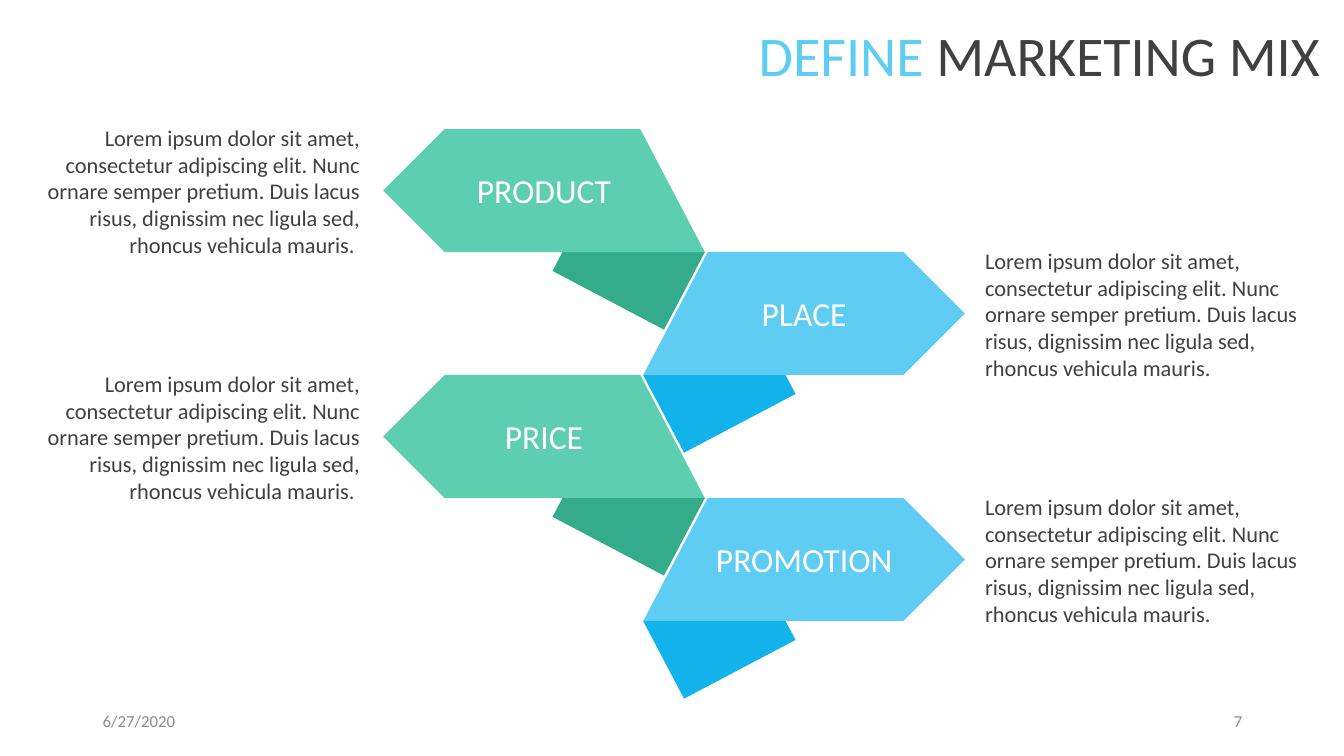
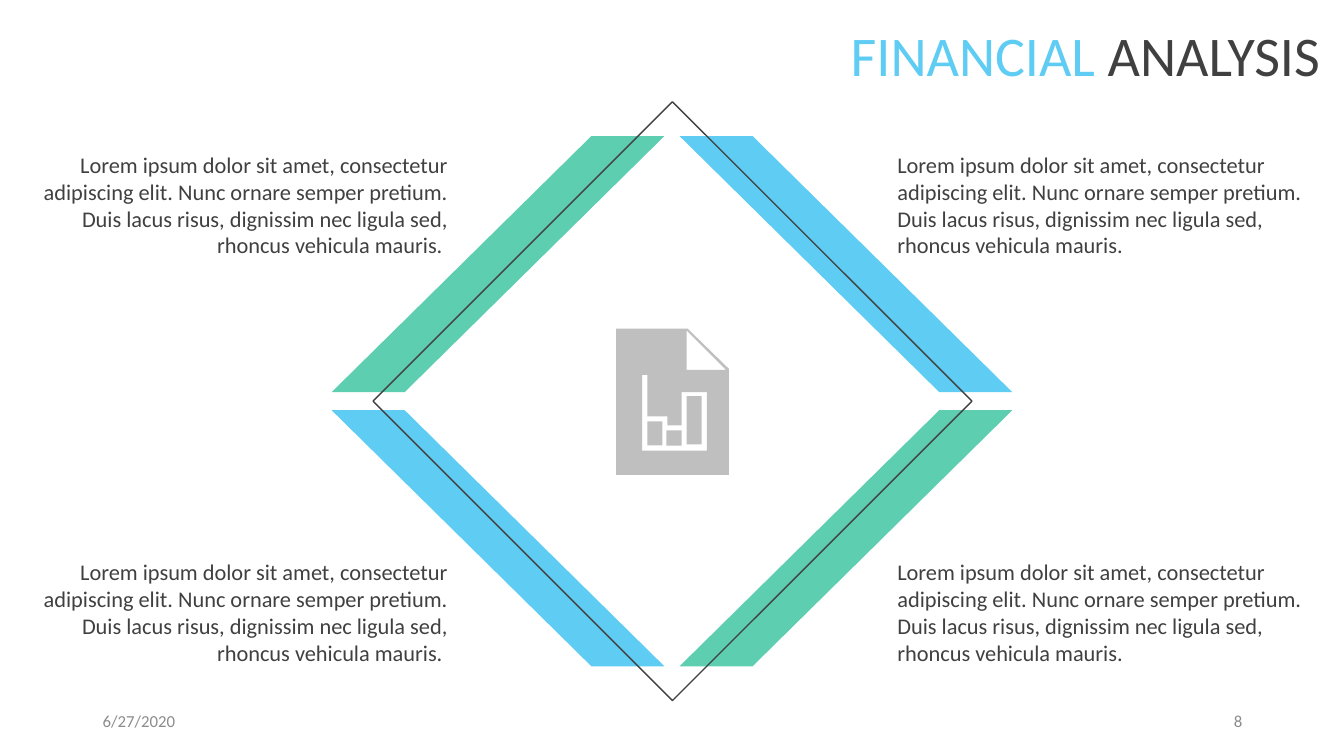
"""Build two slides: a marketing mix ribbon and a financial analysis diamond."""
from pptx import Presentation
from pptx.dml.color import RGBColor
from pptx.enum.shapes import MSO_SHAPE
from pptx.enum.text import MSO_ANCHOR, PP_ALIGN
from pptx.util import Inches, Pt

RECTANGLE = MSO_SHAPE.RECTANGLE
PARALLELOGRAM = MSO_SHAPE.PARALLELOGRAM
DIAMOND = MSO_SHAPE.DIAMOND
MIDDLE = MSO_ANCHOR.MIDDLE
LEFT, CENTER, RIGHT = PP_ALIGN.LEFT, PP_ALIGN.CENTER, PP_ALIGN.RIGHT

FONT = "Calibri"
BLUE = RGBColor(0x5E, 0xCC, 0xF3)
DARK_BLUE = RGBColor(0x12, 0xB2, 0xEB)
GREEN = RGBColor(0x5D, 0xCE, 0xAF)
DARK_GREEN = RGBColor(0x34, 0xAC, 0x8B)
CHARCOAL = RGBColor(0x40, 0x40, 0x40)
FOOTER_GRAY = RGBColor(0x8C, 0x8C, 0x8C)
ICON_GRAY = RGBColor(0xBF, 0xBF, 0xBF)
WHITE = RGBColor(0xFF, 0xFF, 0xFF)

DATE = "6/27/2020"
BODY = (
    "Lorem ipsum dolor sit amet, consectetur adipiscing elit. "
    "Nunc ornare semper pretium. Duis lacus risus, dignissim nec ligula sed, "
    "rhoncus vehicula mauris."
)

ROW_TOP, ROW_HEIGHT = 1.28, 1.22
MIRROR_SUM = 13.37
ARROW = [(6.35, 0), (4.41, 0), (3.8, 0.61), (4.41, 1.22), (6.99, 1.22)]
FOLD_LEFT, FOLD_DROP, FOLD_WIDTH, FOLD_HEIGHT = 5.61, 0.88, 1.25, 0.87
FOLD_ANGLE = 27.8

SHEET = [(6.11, 3.26), (6.82, 3.26), (7.23, 3.66), (7.23, 4.71), (6.11, 4.71)]
SHEET_CORNER = [(6.81, 3.28), (7.2, 3.67), (6.81, 3.67)]
CHART_OUTLINE = [
    (6.37, 3.72), (6.42, 3.72), (6.42, 4.13), (6.62, 4.13), (6.62, 4.22),
    (6.76, 4.22), (6.76, 3.89), (7.01, 3.89), (7.01, 4.47), (6.37, 4.47),
]
CHART_BARS = [
    (6.42, 4.18, 0.15, 0.24), (6.61, 4.27, 0.15, 0.15), (6.81, 3.93, 0.15, 0.48),
]


def write_spans(frame, spans, size, align):
    frame.word_wrap = True
    frame.vertical_anchor = MIDDLE
    para = frame.paragraphs[0]
    para.alignment = align
    for text, color in spans:
        span = para.add_run()
        span.text = text
        span.font.name = FONT
        span.font.size = Pt(size)
        span.font.color.rgb = color


def add_text(page, place, spans, size, align, padded=False):
    box = page.shapes.add_textbox(*map(Inches, place))
    frame = box.text_frame
    if not padded:
        frame.margin_left = frame.margin_right = 0
        frame.margin_top = frame.margin_bottom = 0
    write_spans(frame, spans, size, align)


def add_body(page, place, align):
    text = BODY + " " if align == RIGHT else BODY
    add_text(page, place, [(text, CHARCOAL)], 16, align)


def paint(shape, color):
    shape.shadow.inherit = False
    shape.fill.solid()
    shape.fill.fore_color.rgb = color
    shape.line.fill.background()


def add_filled(shapes, kind, place, color):
    shape = shapes.add_shape(kind, *map(Inches, place))
    paint(shape, color)
    return shape


def add_outline(shapes, contours, color):
    contours = [[(Inches(x), Inches(y)) for x, y in points] for points in contours]
    builder = shapes.build_freeform(*contours[0][0])
    for index, points in enumerate(contours):
        if index:
            builder.move_to(*points[0])
        builder.add_line_segments(points[1:], close=True)
    shape = builder.convert_to_shape()
    paint(shape, color)
    return shape


def add_page(deck, accent, rest, number):
    page = deck.slides.add_slide(deck.slide_layouts[6])
    title = [(accent + " ", BLUE), (rest, CHARCOAL)]
    add_text(page, (0.25, 0.2, 12.84, 0.67), title, 40, RIGHT)
    for left, text, align in ((0.92, DATE, LEFT), (9.42, str(number), RIGHT)):
        add_text(page, (left, 6.95, 3, 0.4), [(text, FOOTER_GRAY)], 12, align, True)
    return page


def add_ribbon_row(page, index, label):
    top = ROW_TOP + index * ROW_HEIGHT
    points = [(x, top + y) for x, y in ARROW]
    fold_left, angle = FOLD_LEFT, FOLD_ANGLE
    color, fold_color = GREEN, DARK_GREEN
    body_left, align = 0.26, RIGHT
    if index % 2:
        points = [(MIRROR_SUM - x, y) for x, y in points]
        fold_left, angle = MIRROR_SUM - FOLD_LEFT - FOLD_WIDTH, -FOLD_ANGLE
        color, fold_color = BLUE, DARK_BLUE
        body_left, align = 9.77, LEFT
    place = (fold_left, top + FOLD_DROP, FOLD_WIDTH, FOLD_HEIGHT)
    fold = add_filled(page.shapes, RECTANGLE, place, fold_color)
    fold.rotation = angle
    arrow = add_outline(page.shapes, [points], color)
    write_spans(arrow.text_frame, [(label, WHITE)], 24, CENTER)
    add_body(page, (body_left, top - 0.06, 3.31, 1.35), align)


def add_band(page, left, top, flipped):
    color = BLUE if flipped else GREEN
    band = add_filled(page.shapes, PARALLELOGRAM, (left, top, 3.3, 2.54), color)
    band.adjustments[0] = 1.014
    if flipped:
        band.element.spPr.xfrm.set("flipH", "1")


def add_diamond(page):
    diamond = page.shapes.add_shape(DIAMOND, *map(Inches, (3.7, 1.01, 5.94, 5.94)))
    diamond.shadow.inherit = False
    diamond.fill.background()
    diamond.line.color.rgb = CHARCOAL
    diamond.line.width = Pt(1)


def add_report_icon(page):
    icon = page.shapes.add_group_shape()
    add_outline(icon.shapes, [SHEET, SHEET_CORNER, CHART_OUTLINE], ICON_GRAY)
    for place in CHART_BARS:
        add_filled(icon.shapes, RECTANGLE, place, ICON_GRAY)


def build_marketing_mix(deck):
    page = add_page(deck, "DEFINE", "MARKETING MIX", 7)
    for index, label in enumerate(("PRODUCT", "PLACE", "PRICE", "PROMOTION")):
        add_ribbon_row(page, index, label)


def build_financial_analysis(deck):
    page = add_page(deck, "FINANCIAL", "ANALYSIS", 8)
    for row, (band_top, body_top) in enumerate(((1.35, 1.49), (4.07, 5.53))):
        sides = ((3.29, 0.25, RIGHT), (6.74, 8.9, LEFT))
        for column, (band_left, body_left, align) in enumerate(sides):
            add_band(page, band_left, band_top, row != column)
            add_body(page, (body_left, body_top, 4.19, 1.08), align)
    add_diamond(page)
    add_report_icon(page)


def main():
    deck = Presentation()
    deck.slide_width = Inches(13.33)
    deck.slide_height = Inches(7.5)
    build_marketing_mix(deck)
    build_financial_analysis(deck)
    deck.save("out.pptx")


if __name__ == "__main__":
    main()
